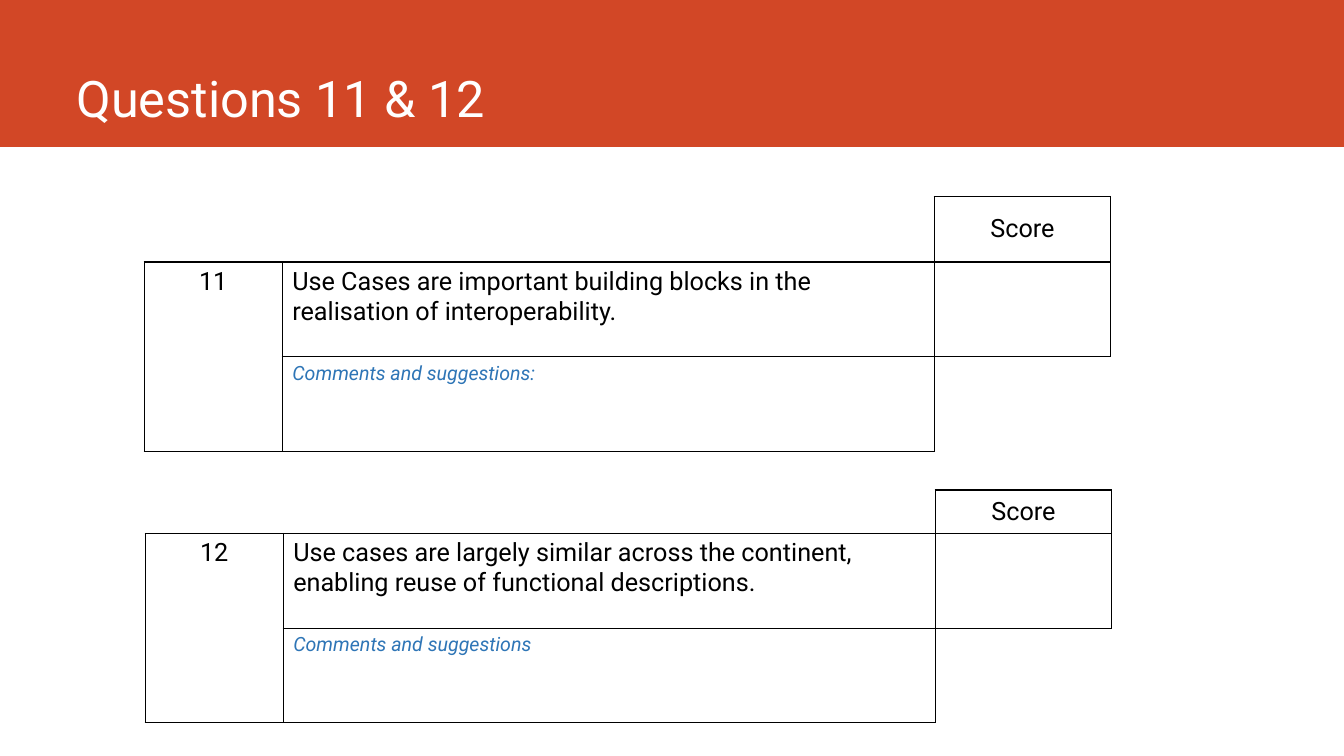
import dataclasses

import pptx
import pptx.dml.color
import pptx.enum.shapes
import pptx.enum.text
import pptx.oxml
import pptx.oxml.ns
import pptx.util

Pt = pptx.util.Pt
ALIGN = pptx.enum.text.PP_ALIGN
ANCHOR = pptx.enum.text.MSO_ANCHOR


@dataclasses.dataclass(frozen=True)
class Theme:
    font: str = "Roboto"
    band: str = "D24726"
    heading: str = "FFFFFF"
    ink: str = "000000"
    comment: str = "2E75B6"
    heading_size: int = 36
    body_size: int = 18
    comment_size: int = 14
    rule_width: int = 1


THEME = Theme()
SLIDE_WIDTH, SLIDE_HEIGHT = 960, 540
COLUMN_WIDTHS = (98.6, 465.8, 126)
ANSWER_HEIGHT = 67.7
# Sides ruled in each cell; the corners beside the score column stay open.
RULED_SIDES = (
    ("RB", "RB", "LRTB"),
    ("LRTB", "LRTB", "LRTB"),
    ("LRTB", "LRTB", "LT"),
)


def rgb(color):
    return pptx.dml.color.RGBColor.from_string(color)


def write(frame, words, size, color, align=ALIGN.LEFT, italic=None):
    paragraph = frame.paragraphs[0]
    paragraph.alignment = align
    run = paragraph.add_run()
    run.text = words
    font_format = {"name": THEME.font, "size": Pt(size), "italic": italic}
    for attribute, value in font_format.items():
        setattr(run.font, attribute, value)
    run.font.color.rgb = rgb(color)


def rule_cell(cell, ruled):
    """Rule the listed sides of a cell and leave its other sides open."""
    properties = cell._tc.get_or_add_tcPr()
    for position, side in enumerate("LRTB"):
        paint = (f'<a:solidFill><a:srgbClr val="{THEME.ink}"/></a:solidFill>'
                 if side in ruled else "<a:noFill/>")
        properties.insert(position, pptx.oxml.parse_xml(
            f'<a:ln{side} {pptx.oxml.ns.nsdecls("a")} '
            f'w="{Pt(THEME.rule_width)}">{paint}</a:ln{side}>'))


def add_header(slide, width, height, words):
    band = slide.shapes.add_shape(
        pptx.enum.shapes.MSO_SHAPE.RECTANGLE, 0, 0, Pt(width), Pt(height))
    band.shadow.inherit = False
    band.fill.solid()
    band.fill.fore_color.rgb = rgb(THEME.band)
    band.line.fill.background()

    heading = slide.shapes.title
    slide.shapes._spTree.remove(band._element)
    heading._element.addprevious(band._element)
    box = {"left": 47.5, "top": 0, "width": width - 113, "height": height - 10}
    for attribute, value in box.items():
        setattr(heading, attribute, Pt(value))
    frame = heading.text_frame
    frame_format = {"vertical_anchor": ANCHOR.BOTTOM, "word_wrap": True,
                    "auto_size": pptx.enum.text.MSO_AUTO_SIZE.NONE}
    for attribute, value in frame_format.items():
        setattr(frame, attribute, value)
    write(frame, words, THEME.heading_size, THEME.heading)


def add_question(slide, left, top, score_height, number, statement, prompt):
    heights = (score_height, ANSWER_HEIGHT, ANSWER_HEIGHT)
    question = slide.shapes.add_table(
        len(heights), len(COLUMN_WIDTHS), Pt(left), Pt(top),
        Pt(sum(COLUMN_WIDTHS)), Pt(sum(heights))).table
    question.first_row = question.horz_banding = False
    for column, width in zip(question.columns, COLUMN_WIDTHS):
        column.width = Pt(width)
    for row, height, ruled_row in zip(question.rows, heights, RULED_SIDES):
        row.height = Pt(height)
        for cell, ruled in zip(row.cells, ruled_row):
            cell.fill.background()
            rule_cell(cell, ruled)
    question.cell(0, 0).merge(question.cell(0, 1))
    question.cell(1, 0).merge(question.cell(2, 0))

    score = question.cell(0, 2)
    score.vertical_anchor = ANCHOR.MIDDLE
    body = (THEME.body_size, THEME.ink)
    write(score.text_frame, "Score", *body, ALIGN.CENTER)
    write(question.cell(1, 0).text_frame, number, *body, ALIGN.CENTER)
    write(question.cell(1, 1).text_frame, statement, *body)
    write(question.cell(2, 1).text_frame, prompt, THEME.comment_size,
          THEME.comment, italic=True)


def main():
    deck = pptx.Presentation()
    deck.slide_width, deck.slide_height = Pt(SLIDE_WIDTH), Pt(SLIDE_HEIGHT)
    slide = deck.slides.add_slide(deck.slide_layouts.get_by_name("Title Only"))
    add_header(slide, SLIDE_WIDTH, 105, "Questions 11 & 12")
    add_question(
        slide, 103, 140.4, 46.8, "11",
        "Use Cases are important building blocks in the realisation of "
        "interoperability.", "Comments and suggestions:")
    add_question(
        slide, 103.7, 350, 31, "12",
        "Use cases are largely similar across the continent, enabling reuse "
        "of functional descriptions.", "Comments and suggestions")
    deck.save("out.pptx")


if __name__ == "__main__":
    main()
